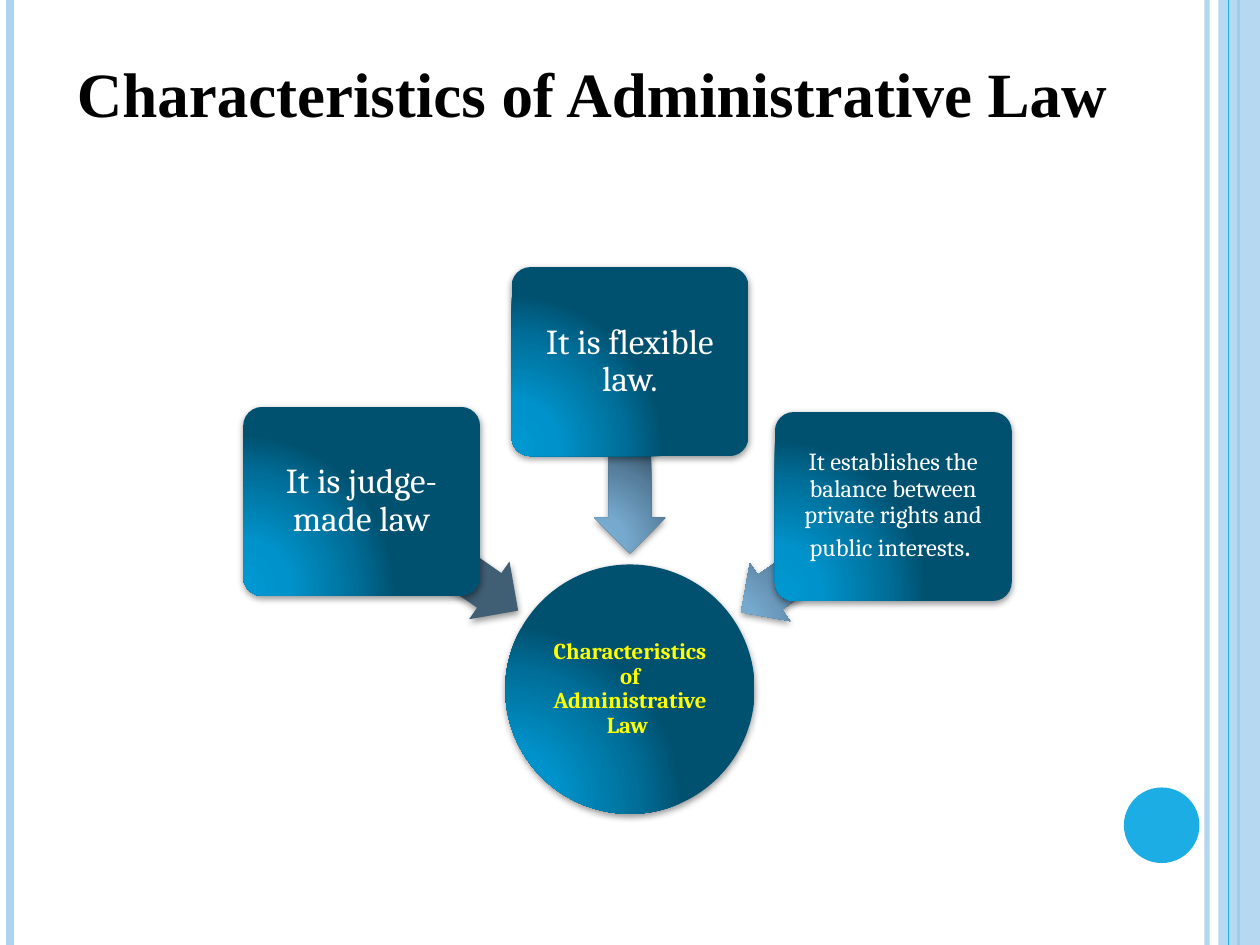
from lxml.etree import SubElement
from pptx import Presentation
from pptx.dml.color import RGBColor
from pptx.enum.shapes import MSO_CONNECTOR, MSO_SHAPE
from pptx.enum.text import MSO_ANCHOR, MSO_AUTO_SIZE, PP_ALIGN
from pptx.oxml.ns import qn
from pptx.util import Inches, Pt

WIDE, HIGH = 10, 7.5
PALE = RGBColor(0xAC, 0xD3, 0xEF)
SKY = RGBColor(0x1C, 0xAD, 0xE4)
BLACK = RGBColor(0, 0, 0)
WHITE = RGBColor(255, 255, 255)
YELLOW = RGBColor(255, 255, 0)
STOPS = 0, 30, 75, 100
DEEP = [RGBColor.from_string(c) for c in ("0098D1", "0092CA", "006E98", "005170")]
STEEL = [RGBColor.from_string(c) for c in ("7BAFD6", "76A9CE", "577F9D", "405E74")]

TITLE = "Characteristics of Administrative Law "
HUB = (4.01, 4.48, 1.98, 1.98)
CARD = (1.88, 1.5)
# left, top, inset, runs, arrow box, arrow turn
CARDS = [
    (1.93, 3.23, 0.04, [("It is judge-made law", 20)], (2.73, 4.13, 1.52, 0.56), 215),
    (4.06, 2.12, 0.04, [("It is flexible law.", 20)], (4.24, 3.35, 1.52, 0.56), 270),
    (6.15, 3.27, 0.03, [
        ("It establishes the balance between private rights and public interests", 14),
        (". ", 18)], (5.75, 4.16, 1.47, 0.56), 325.2),
]
BACK = [(9.58, PALE, 3, 93), (0.08, PALE, 4.5, 100), (9.83, SKY, 1.5, 100)]
FRONT = [(9.75, SKY, 0.75, 100)]


def node(root, tag, **vals):
    return SubElement(root, qn("a:" + tag), {k: str(v) for k, v in vals.items()})


def fade(item, share):
    for tint in item._element.spPr.iter(qn("a:srgbClr")):
        node(tint, "alpha", val=share * 1000)


def rule(slide, left, color, width, share):
    line = slide.shapes.add_connector(
        MSO_CONNECTOR.STRAIGHT, Inches(left), 0, Inches(left), Inches(HIGH))
    line.line.color.rgb = color
    line.line.width = Pt(width)
    if share < 100:
        fade(line, share)
    node(line._element.spPr, "effectLst")


def plain(slide, kind, box, color):
    shape = slide.shapes.add_shape(kind, *map(Inches, box))
    shape.shadow.inherit = False
    shape.fill.solid()
    shape.fill.fore_color.rgb = color
    shape.line.fill.background()
    return shape


def glossy(slide, kind, box, colors):
    shape = plain(slide, kind, box, colors[0])
    props = shape._element.spPr
    old = props.find(qn("a:solidFill"))
    grad = node(props, "gradFill", rotWithShape=1)
    props.replace(old, grad)
    stops = node(grad, "gsLst")
    for pos, color in zip(STOPS, colors):
        node(node(stops, "gs", pos=pos * 1000), "srgbClr", val=color)
    sweep = node(grad, "path", path="circle")
    node(sweep, "fillToRect", l=5000, t=100000, r=120000, b=10000)
    cast = node(props.find(qn("a:effectLst")), "outerShdw", blurRad=Pt(4),
                dist=Pt(1.6), dir=5400000, algn="ctr", rotWithShape=0)
    node(node(cast, "srgbClr", val=BLACK), "alpha", val=42000)
    return shape


def write(shape, runs, inset, **look):
    frame = shape.text_frame
    frame.word_wrap = True
    frame.vertical_anchor = MSO_ANCHOR.MIDDLE
    for side in ("left", "top", "right", "bottom"):
        setattr(frame, "margin_" + side, Inches(inset))
    para = frame.paragraphs[0]
    para.alignment = PP_ALIGN.CENTER
    para.line_spacing = 0.9
    for text, size in runs:
        run = para.add_run()
        run.text = text
        style(run.font, size=Pt(size), name="Cambria", **look)


def style(font, color, **look):
    font.color.rgb = color
    for key, val in look.items():
        setattr(font, key, val)


def main():
    """Build the slide on the traits of administrative law."""
    deck = Presentation()
    deck.slide_width, deck.slide_height = Inches(WIDE), Inches(HIGH)
    slide = deck.slides.add_slide(deck.slide_layouts[5])

    for row in BACK:
        rule(slide, *row)
    fade(plain(slide, MSO_SHAPE.RECTANGLE, (9.67, 0, 0.33, HIGH), PALE), 87)
    for row in FRONT:
        rule(slide, *row)
    plain(slide, MSO_SHAPE.OVAL, (8.92, 6.25, 0.6, 0.6), SKY)

    hub = glossy(slide, MSO_SHAPE.OVAL, HUB, DEEP)
    write(hub, [(TITLE, 13)], 0.01, color=YELLOW, bold=True)
    for left, top, inset, runs, box, turn in CARDS:
        arrow = glossy(slide, MSO_SHAPE.LEFT_ARROW, box, STEEL)
        arrow.rotation = turn
        arrow.adjustments[0] = 0.6
        card = glossy(slide, MSO_SHAPE.ROUNDED_RECTANGLE, (left, top, *CARD), DEEP)
        card.adjustments[0] = 0.1
        write(card, runs, inset, color=WHITE)

    title = slide.shapes.title
    place = dict(left=0.48, top=0.38, width=8.44, height=0.71)
    for key, val in place.items():
        setattr(title, key, Inches(val))
    frame = title.text_frame
    frame.text = TITLE
    look = dict(word_wrap=True, vertical_anchor=MSO_ANCHOR.TOP,
                auto_size=MSO_AUTO_SIZE.SHAPE_TO_FIT_TEXT)
    for key, val in look.items():
        setattr(frame, key, val)
    para = frame.paragraphs[0]
    para.alignment = PP_ALIGN.CENTER
    style(para.runs[0].font, BLACK, size=Pt(36), name="Times New Roman", bold=True)
    deck.save("out.pptx")


if __name__ == "__main__":
    main()
